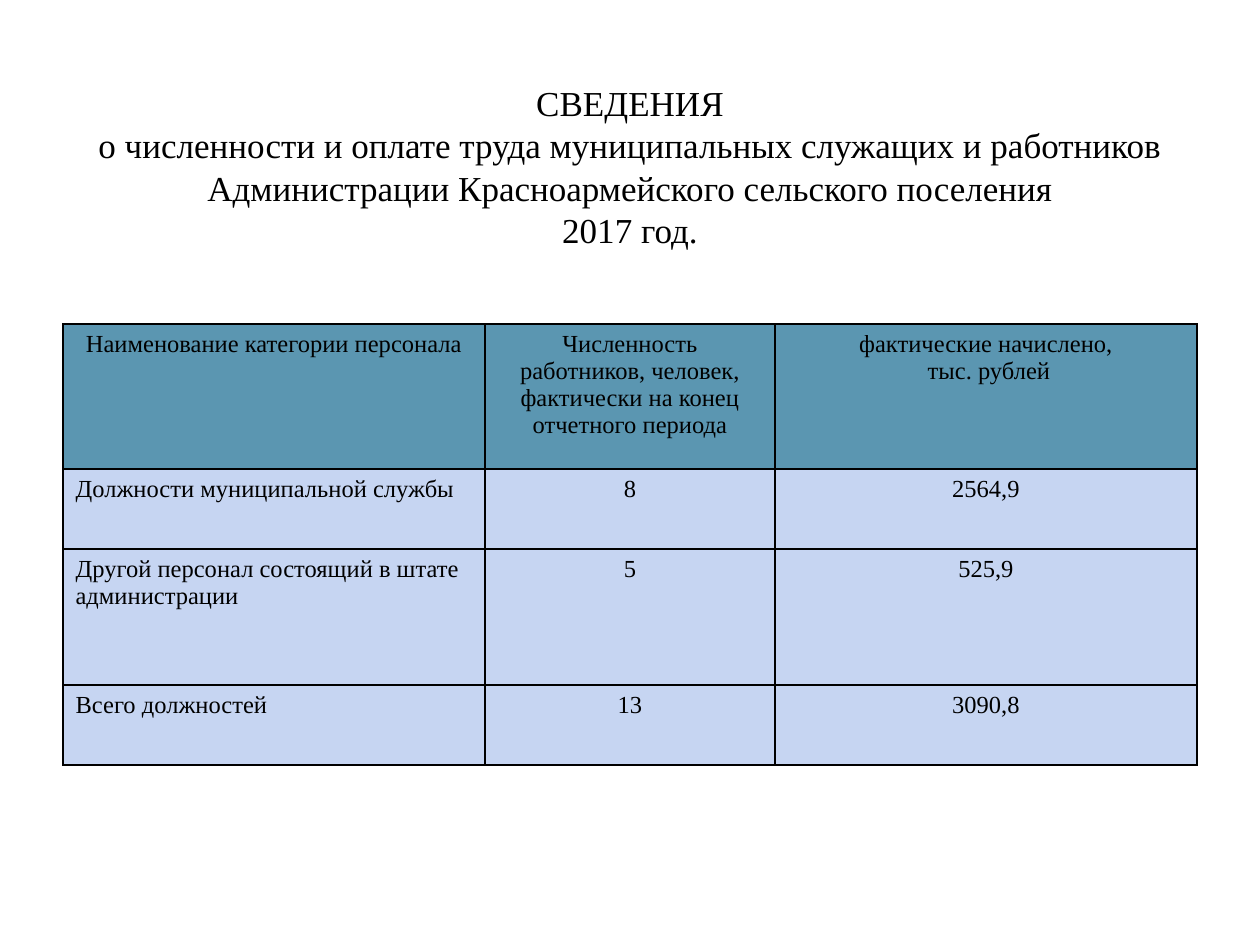
import lxml.etree
import pptx
import pptx.dml.color
import pptx.enum.text
import pptx.oxml.ns
import pptx.util

EMU_PER_PX = 914400 / 126
COLORS = {"text": "000000", "border": "000000", "header": "5B96B1", "body": "C6D5F2"}
FONT = "Times New Roman"
ALIGN = pptx.enum.text.PP_ALIGN
ANCHOR = pptx.enum.text.MSO_ANCHOR

TITLE = (
    "СВЕДЕНИЯ\v"
    "о численности и оплате труда муниципальных служащих и работников "
    "Администрации Красноармейского сельского поселения\v"
    "2017 год."
)
ROWS = [
    [
        "Наименование категории персонала",
        "Численность работников, человек,\nфактически на конец отчетного периода",
        "фактические начислено,\n тыс. рублей",
    ],
    ["Должности муниципальной службы", "8", "2564,9"],
    ["Другой персонал состоящий в штате администрации", "5", "525,9"],
    ["Всего должностей", "13", "3090,8"],
]
COLUMN_WIDTHS = [422, 290, 422]
ROW_HEIGHTS = [145, 80, 136, 80]


def px(length):
    return pptx.util.Emu(round(length * EMU_PER_PX))


def rgb(name):
    return pptx.dml.color.RGBColor.from_string(COLORS[name])


def write_text(text_frame, text, size, align=ALIGN.CENTER, line_spacing=None):
    text_frame.text = text
    for paragraph in text_frame.paragraphs:
        paragraph.alignment = align
        paragraph.line_spacing = line_spacing
        for run in paragraph.runs:
            run.font.name = FONT
            run.font.size = pptx.util.Pt(size)
            run.font.bold = False
            run.font.color.rgb = rgb("text")


def add_borders(cell, width):
    qualified = pptx.oxml.ns.qn
    properties = cell._tc.get_or_add_tcPr()
    for side in ("a:lnL", "a:lnR", "a:lnT", "a:lnB"):
        line = lxml.etree.SubElement(
            properties, qualified(side), w=str(pptx.util.Pt(width))
        )
        fill = lxml.etree.SubElement(line, qualified("a:solidFill"))
        lxml.etree.SubElement(fill, qualified("a:srgbClr"), val=COLORS["border"])


def place_title(slide, left, top, width, height):
    title = slide.shapes.title
    title.left, title.top = px(left), px(top)
    title.width, title.height = px(width), px(height)
    title.text_frame.vertical_anchor = ANCHOR.MIDDLE
    write_text(title.text_frame, TITLE, size=20, line_spacing=pptx.util.Pt(24))


def place_staff_table(slide, left, top):
    table = slide.shapes.add_table(
        len(ROWS), len(COLUMN_WIDTHS), px(left), px(top),
        px(sum(COLUMN_WIDTHS)), px(sum(ROW_HEIGHTS)),
    ).table
    table.first_row = False
    table.horz_banding = False
    for column, width in zip(table.columns, COLUMN_WIDTHS):
        column.width = px(width)
    for row_index, (row, height) in enumerate(zip(table.rows, ROW_HEIGHTS)):
        row.height = px(height)
        for column_index, text in enumerate(ROWS[row_index]):
            cell = row.cells[column_index]
            is_label = row_index > 0 and column_index == 0
            write_text(
                cell.text_frame, text, size=14,
                align=ALIGN.LEFT if is_label else ALIGN.CENTER,
            )
            cell.vertical_anchor = ANCHOR.TOP
            add_borders(cell, width=1)
            cell.fill.solid()
            cell.fill.fore_color.rgb = rgb("body" if row_index else "header")


def main():
    presentation = pptx.Presentation()
    presentation.slide_width = px(1260)
    presentation.slide_height = px(945)
    slide = presentation.slides.add_slide(presentation.slide_layouts[5])
    place_title(slide, left=63, top=38, width=1134, height=256)
    place_staff_table(slide, left=63, top=324)
    presentation.save("out.pptx")


if __name__ == "__main__":
    main()
